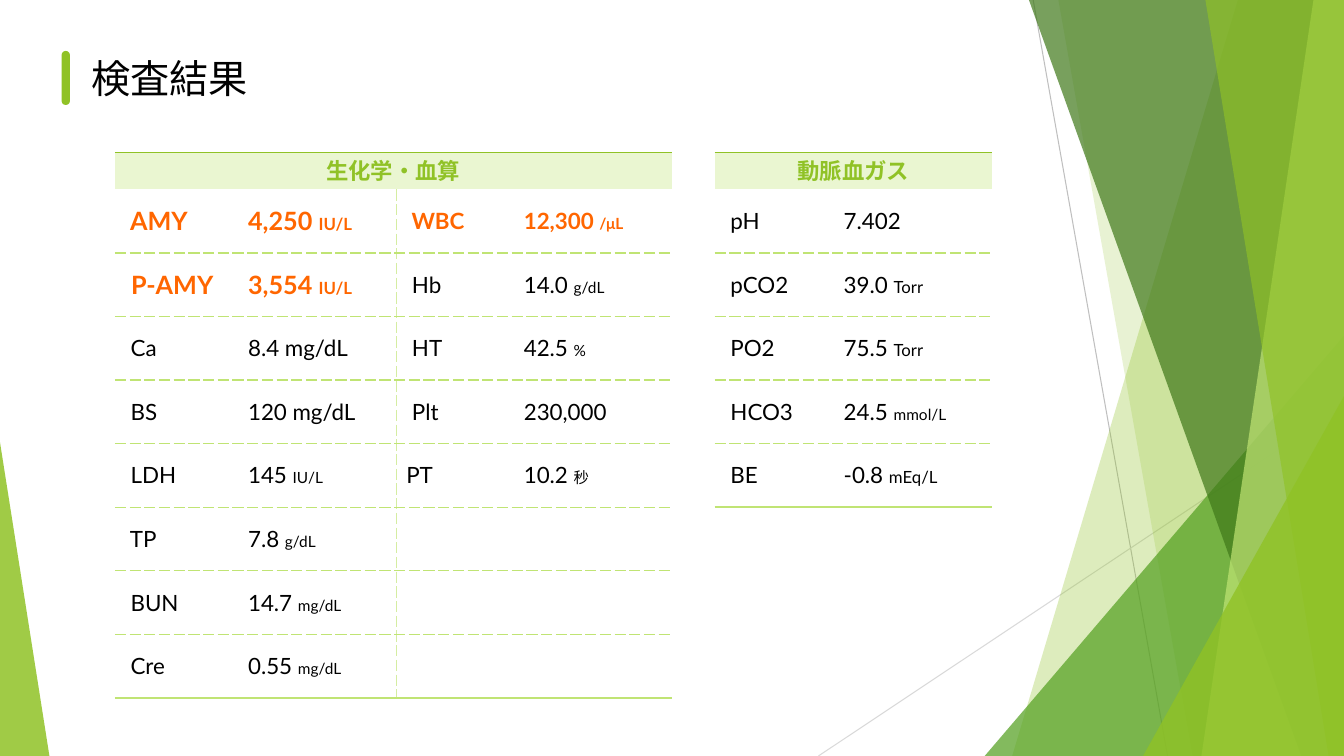
from collections import namedtuple
from itertools import zip_longest

from lxml.etree import SubElement
from pptx import Presentation
from pptx.dml.color import RGBColor
from pptx.enum.shapes import MSO_CONNECTOR as Connector, MSO_SHAPE as Shape
from pptx.enum.text import MSO_ANCHOR as Anchor, MSO_AUTO_SIZE as AutoSize, PP_ALIGN as Align
from pptx.oxml.ns import qn
from pptx.util import Pt

Result = namedtuple("Result", "label value unit size unit_size alert", defaults=("", 16, 11, False))

TITLE = "検査結果"
CHEMISTRY = [
    Result(" AMY", "4,250 ", "IU/L", 18, 12, True),
    Result(" P-AMY", "3,554 ", "IU/L", 18, 12, True),
    Result(" Ca", "8.4 mg/dL"),
    Result(" BS", "120 mg/dL"),
    Result(" LDH", "145 ", "IU/L"),
    Result(" TP", "7.8 ", "g/dL"),
    Result(" BUN", "14.7 ", "mg/dL"),
    Result(" Cre", "0.55 ", "mg/dL"),
]
BLOOD_COUNT = [
    Result(" WBC", "12,300 ", "/μL", alert=True),
    Result(" Hb", "14.0 ", "g/dL"),
    Result(" HT", "42.5 ", "%"),
    Result(" Plt", "230,000"),
    Result("PT", "10.2 ", "秒"),
]
BLOOD_GAS = [
    Result(" pH", "7.402"),
    Result(" pCO2", "39.0 ", "Torr", unit_size=12),
    Result(" PO2", "75.5 ", "Torr", unit_size=12),
    Result(" HCO3", "24.5 ", "mmol/L"),
    Result(" BE", "-0.8 ", "mEq/L", unit_size=12),
]
# heading, left edge, column widths, groups of results side by side
TABLES = [
    ("生化学・血算", 82, (88, 113, 84, 113), (CHEMISTRY, BLOOD_COUNT)),
    ("動脈血ガス", 510.5, (85, 113), (BLOOD_GAS,)),
]
TABLE_TOP, HEADING_HEIGHT, ROW_HEIGHT = 108.7, 26.6, 45.4
WIDTH, HEIGHT = 960, 540


class Theme:
    font = "Lato"
    title_size, heading_size = 28, 16
    ink, white, alert = "000000", "FFFFFF", "FF6600"
    green, leaf, forest, lime = "90C226", "54A021", "3F7819", "C0E474"
    heading_fill, divider = "EAF6D1", "D5EDA2"
    gray, light_gray = "BFBFBF", "D9D9D9"


# Decoration, from back to front
RAYS = [((738, 0), (834, HEIGHT), Theme.gray), ((WIDTH, 290), (584.6, HEIGHT), Theme.light_gray)]
# bands reach the right edge: left edge at top, left edge at bottom, colour, opacity
# triangles: left, top, width, height, apex, colour, opacity
DECORATION = [
    (884.2, 723, Theme.green, 30),
    (756, 851.8, Theme.green, 20),
    (703.4, 239.8, 256.6, 300.2, 1, Theme.leaf, 72),
    (735, 929.5, Theme.forest, 70),
    (938.2, 858.2, Theme.lime, 70),
    (861, 949, Theme.green, 65),
    (816.5, 283, 143.5, 257, 1, Theme.green, 80),
    (0, 316, 35.3, 224, 0, Theme.green, 85),
]


def paint(shape, color, opacity=100):
    shape.shadow.inherit = False
    shape.line.fill.background()
    shape.fill.solid()
    shape.fill.fore_color.rgb = RGBColor.from_string(color)
    if opacity < 100:
        color_element = shape.fill._xPr.find(qn("a:solidFill"))[0]
        SubElement(color_element, qn("a:alpha"), val=str(opacity * 1000))


def add_text(paragraph, text, size=16, color=Theme.ink, bold=False, align=Align.LEFT):
    paragraph.alignment = align
    run = paragraph.add_run()
    run.text = text
    run.font.name = Theme.font
    run.font.size = Pt(size)
    run.font.bold = bold
    run.font.color.rgb = RGBColor.from_string(color)
    SubElement(run._r.get_or_add_rPr(), qn("a:ea"), typeface=Theme.font)


def add_ray(slide, start, end, color):
    ray = slide.shapes.add_connector(Connector.STRAIGHT, *map(Pt, start + end))
    ray.line.color.rgb = RGBColor.from_string(color)
    ray.line.width = Pt(0.75)
    SubElement(ray._element.spPr, qn("a:effectLst"))


def add_band(slide, top_left, bottom_left, color, opacity):
    builder = slide.shapes.build_freeform(Pt(top_left), 0)
    corners = [(WIDTH, 0), (WIDTH, HEIGHT), (bottom_left, HEIGHT)]
    builder.add_line_segments([(Pt(x), Pt(y)) for x, y in corners], close=True)
    paint(builder.convert_to_shape(), color, opacity)


def add_triangle(slide, left, top, width, height, apex, color, opacity):
    triangle = slide.shapes.add_shape(Shape.ISOSCELES_TRIANGLE, Pt(left), Pt(top), Pt(width), Pt(height))
    triangle.adjustments[0] = apex
    paint(triangle, color, opacity)


def style_cell(cell, fill, borders):
    """Fill the cell; borders maps L, R, T, B to (colour, width, dash), other sides stay bare."""
    cell.vertical_anchor = Anchor.MIDDLE
    cell.fill.solid()
    cell.fill.fore_color.rgb = RGBColor.from_string(fill)
    properties = cell._tc.get_or_add_tcPr()
    for position, side in enumerate("LRTB"):
        color, width, dash = borders.get(side, (None, 0, None))
        line = SubElement(properties, qn(f"a:ln{side}"), w=str(Pt(width)))
        properties.insert(position, line)
        if color:
            SubElement(SubElement(line, qn("a:solidFill")), qn("a:srgbClr"), val=color)
            SubElement(line, qn("a:prstDash"), val=dash)
        else:
            SubElement(line, qn("a:noFill"))


def body_borders(row, column, last_row):
    dashed = (Theme.lime, 1, "sysDash")
    borders = {"B": (Theme.lime, 1.5, "solid") if row == last_row else dashed}
    if row > 1:
        borders["T"] = dashed
    if column in (1, 2):
        borders["R" if column == 1 else "L"] = (Theme.divider, 1, "sysDash")
    return borders


def write_result(label_cell, value_cell, result):
    look = {"color": Theme.alert if result.alert else Theme.ink, "bold": result.alert}
    add_text(label_cell.text_frame.paragraphs[0], result.label, size=result.size, **look)
    value = value_cell.text_frame.paragraphs[0]
    add_text(value, result.value, size=result.size, **look)
    if result.unit:
        add_text(value, result.unit, size=result.unit_size, **look)


def add_results(slide, heading, left, widths, groups):
    rows = list(zip_longest(*groups))
    height = HEADING_HEIGHT + ROW_HEIGHT * len(rows)
    table = slide.shapes.add_table(len(rows) + 1, len(widths), Pt(left), Pt(TABLE_TOP),
                                   Pt(sum(widths)), Pt(height)).table
    table.first_row = table.horz_banding = False
    for column, width in zip(table.columns, widths):
        column.width = Pt(width)
    for index, row in enumerate(table.rows):
        row.height = Pt(ROW_HEIGHT if index else HEADING_HEIGHT)

    for column in range(len(widths)):
        style_cell(table.cell(0, column), Theme.heading_fill, {"T": (Theme.green, 1, "solid")})
        for row in range(1, len(rows) + 1):
            borders = body_borders(row, column if len(groups) > 1 else 0, len(rows))
            style_cell(table.cell(row, column), Theme.white, borders)

    table.cell(0, 0).merge(table.cell(0, len(widths) - 1))
    add_text(table.cell(0, 0).text_frame.paragraphs[0], heading, size=Theme.heading_size,
             color=Theme.green, bold=True, align=Align.CENTER)
    for row, results in enumerate(rows, 1):
        for group, result in enumerate(results):
            if result:
                write_result(table.cell(row, 2 * group), table.cell(row, 2 * group + 1), result)


def add_title(slide):
    bar = slide.shapes.add_shape(Shape.ROUNDED_RECTANGLE, Pt(44), Pt(36.4), Pt(6), Pt(38.6))
    bar.adjustments[0] = 0.5
    paint(bar, Theme.green)
    frame = slide.shapes.add_textbox(Pt(58.3), Pt(35.3), Pt(127.4), Pt(41)).text_frame
    frame.word_wrap = False
    frame.auto_size = AutoSize.SHAPE_TO_FIT_TEXT
    add_text(frame.paragraphs[0], TITLE, size=Theme.title_size)


def main():
    presentation = Presentation()
    presentation.slide_width, presentation.slide_height = Pt(WIDTH), Pt(HEIGHT)
    slide = presentation.slides.add_slide(presentation.slide_layouts[6])
    for ray in RAYS:
        add_ray(slide, *ray)
    for part in DECORATION:
        (add_band if len(part) == 4 else add_triangle)(slide, *part)
    add_title(slide)
    for table in TABLES:
        add_results(slide, *table)
    presentation.save("out.pptx")


if __name__ == "__main__":
    main()
